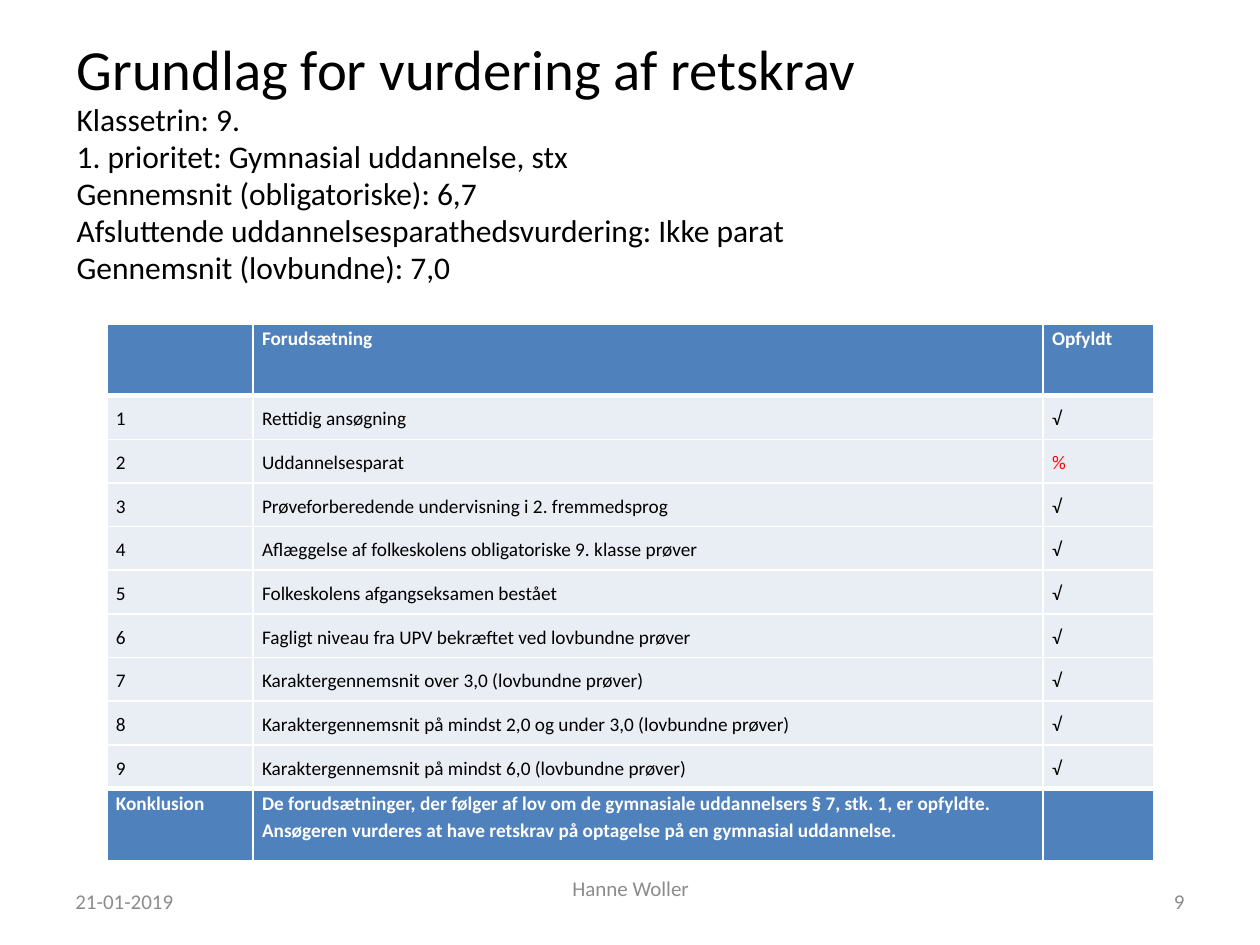
from lxml import etree
from pptx import Presentation
from pptx.dml.color import RGBColor
from pptx.enum import text
from pptx.oxml.ns import qn
from pptx.util import Inches, Pt

BLACK = RGBColor(0, 0, 0)
WHITE = RGBColor(0xFF, 0xFF, 0xFF)
RED = RGBColor(0xFF, 0, 0)
GRAY = RGBColor(0x8C, 0x8C, 0x8C)
BLUE = RGBColor(0x4F, 0x81, 0xBD)
PALE = RGBColor(0xE9, 0xED, 0xF4)
LEFT, CENTER, RIGHT = text.PP_ALIGN.LEFT, text.PP_ALIGN.CENTER, text.PP_ALIGN.RIGHT
TOP, MIDDLE = text.MSO_ANCHOR.TOP, text.MSO_ANCHOR.MIDDLE

TITLE = "Grundlag for vurdering af retskrav"
FACTS = [
    "Klassetrin: 9.",
    "1. prioritet: Gymnasial uddannelse, stx",
    "Gennemsnit (obligatoriske): 6,7",
    "Afsluttende uddannelsesparathedsvurdering: Ikke parat",
    "Gennemsnit (lovbundne): 7,0",
]
HEADER = ("", "Forudsætning", "Opfyldt")
CONDITIONS = [
    ("Rettidig ansøgning", "√"),
    ("Uddannelsesparat", "%"),
    ("Prøveforberedende undervisning i 2. fremmedsprog", "√"),
    ("Aflæggelse af folkeskolens obligatoriske 9. klasse prøver", "√"),
    ("Folkeskolens afgangseksamen bestået", "√"),
    ("Fagligt niveau fra UPV bekræftet ved lovbundne prøver", "√"),
    ("Karaktergennemsnit over 3,0 (lovbundne prøver)", "√"),
    ("Karaktergennemsnit på mindst 2,0 og under 3,0 (lovbundne prøver)", "√"),
    ("Karaktergennemsnit på mindst 6,0 (lovbundne prøver)", "√"),
]
CONCLUSION = (
    "Konklusion",
    "De forudsætninger, der følger af lov om de gymnasiale uddannelsers § 7, stk. 1, "
    "er opfyldte. Ansøgeren vurderes at have retskrav på optagelse på en gymnasial uddannelse.",
    "",
)
FOOTERS = [  # text, left, width, alignment, anchor, top inset
    ("21-01-2019", 0.5, 2.33, LEFT, MIDDLE, 0.05),
    ("Hanne Woller", 3.42, 3.17, CENTER, TOP, 0),
    ("9", 7.17, 2.33, RIGHT, MIDDLE, 0.05),
]
COLUMNS = (1.16, 6.27, 0.88)
TABLE_LEFT, TABLE_TOP, TABLE_HEIGHT, END_ROW = 0.85, 2.57, 4.26, 0.57


def write(p, words, size, color, bold=False):
    r = p.add_run()
    r.text = words
    for name, value in {"name": "Calibri", "size": Pt(size), "bold": bold}.items():
        setattr(r.font, name, value)
    r.font.color.rgb = color


def add_box(slide, box, anchor, top_inset):
    tf = slide.shapes.add_textbox(*map(Inches, box)).text_frame
    tf.word_wrap = True
    tf.vertical_anchor = anchor
    tf.margin_top = Inches(top_inset)
    return tf


def set_borders(cell, widths):
    """Draw white borders; widths are points for left, right, top, bottom."""
    tc_pr = cell._tc.get_or_add_tcPr()
    for i, (tag, width) in enumerate(zip(("a:lnL", "a:lnR", "a:lnT", "a:lnB"), widths)):
        ln = etree.Element(qn(tag), w=str(Pt(width)))
        fill = etree.SubElement(ln, qn("a:solidFill"))
        etree.SubElement(fill, qn("a:srgbClr"), val=str(WHITE))
        tc_pr.insert(i, ln)


def add_conditions_table(slide):
    rows = [HEADER]
    rows += [(str(i), *condition) for i, condition in enumerate(CONDITIONS, 1)]
    rows.append(CONCLUSION)
    last = len(rows) - 1
    row_height = (TABLE_HEIGHT - 2 * END_ROW) / len(CONDITIONS)
    table = slide.shapes.add_table(
        len(rows), len(COLUMNS), Inches(TABLE_LEFT), Inches(TABLE_TOP),
        Inches(sum(COLUMNS)), Inches(TABLE_HEIGHT)).table
    for column, width in zip(table.columns, COLUMNS):
        column.width = Inches(width)
    margins = {"margin_left": 0.07, "margin_right": 0.07, "margin_top": 0, "margin_bottom": 0}
    for i, row in enumerate(rows):
        is_end = i in (0, last)
        table.rows[i].height = Inches(END_ROW if is_end else row_height)
        top = 3 if i in (1, last) else 1
        bottom = 3 if i in (0, last - 1) else 1
        for j, words in enumerate(row):
            cell = table.cell(i, j)
            for name, value in margins.items():
                setattr(cell, name, Inches(value))
            cell.fill.solid()
            cell.fill.fore_color.rgb = BLUE if is_end else PALE
            set_borders(cell, (1, 1, top, bottom))
            if words:
                p = cell.text_frame.paragraphs[0]
                p.line_spacing = 1.15 if is_end else 1.5
                color = WHITE if is_end else RED if words == "%" else BLACK
                write(p, words, 11, color, is_end)


def main():
    prs = Presentation()
    prs.slide_width, prs.slide_height = Inches(10), Inches(7.5)
    slide = prs.slides.add_slide(prs.slide_layouts[6])

    tf = add_box(slide, (0.51, 0.44, 8.5, 1.61), MIDDLE, 0.1)
    write(tf.paragraphs[0], TITLE, 32.4, BLACK)
    for fact in FACTS:
        p = tf.add_paragraph()
        p.line_spacing = 0.98
        write(p, fact, 18, BLACK)

    for words, left, width, align, anchor, inset in FOOTERS:
        p = add_box(slide, (left, 6.95, width, 0.4), anchor, inset).paragraphs[0]
        p.alignment = align
        write(p, words, 12, GRAY)

    add_conditions_table(slide)
    prs.save("out.pptx")


if __name__ == "__main__":
    main()
